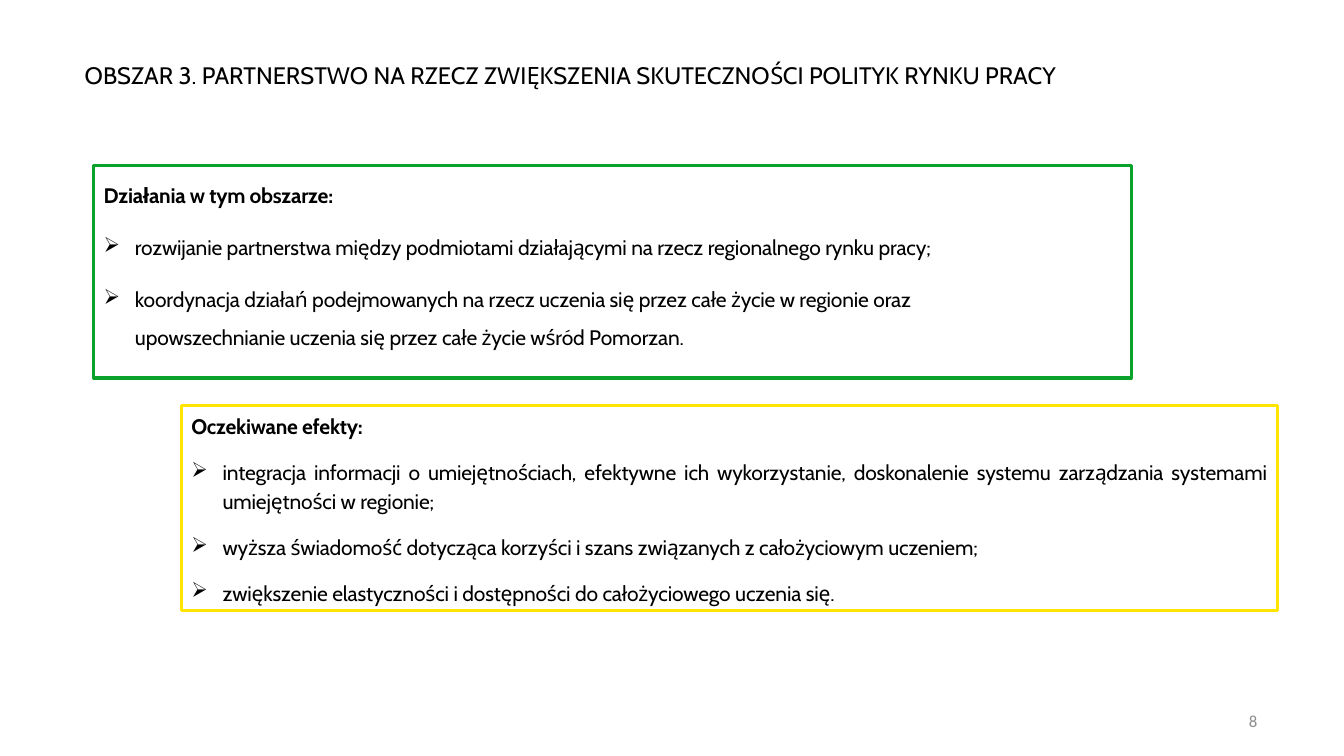
from lxml.etree import SubElement
from pptx import Presentation
from pptx.dml.color import RGBColor
from pptx.enum.shapes import MSO_SHAPE
from pptx.enum.text import MSO_ANCHOR, MSO_AUTO_SIZE, PP_ALIGN
from pptx.oxml.ns import qn
from pptx.util import Inches, Pt

FONT = "Cabin"


def rgb(value):
    return RGBColor.from_string(value)


def format_runs(p, size, color="000000", name=FONT, bold=False, spacing=None):
    for r in p.runs:
        r.font.size = Pt(size)
        r.font.name = name
        r.font.bold = bold
        r.font.color.rgb = rgb(color)
        if spacing is not None:
            r.font._element.set("spc", str(spacing))


def add_bullet(p, tab):
    pPr = p._p.get_or_add_pPr()
    pPr.set("marL", str(Inches(0.31)))
    pPr.set("indent", str(-Inches(0.31)))
    SubElement(pPr, qn("a:buChar")).set("char", "➢")
    if tab:
        tabs = SubElement(pPr, qn("a:tabLst"))
        SubElement(tabs, qn("a:tab"), pos=str(Inches(tab)), algn="l")


def add_title(s, box, text):
    sp = s.shapes.title
    sp.left, sp.top, sp.width, sp.height = map(Inches, box)
    tf = sp.text_frame
    tf.text = text
    tf.word_wrap = True
    tf.auto_size = MSO_AUTO_SIZE.NONE
    tf.vertical_anchor = MSO_ANCHOR.MIDDLE
    p = tf.paragraphs[0]
    p.alignment = PP_ALIGN.LEFT
    p.line_spacing = 1.5
    format_runs(p, 17)


def add_panel(s, box, color, heading, items, align, line_spacing, before, after=0, tab=None):
    sp = s.shapes.add_shape(MSO_SHAPE.RECTANGLE, *map(Inches, box))
    sp.shadow.inherit = False
    sp.fill.solid()
    sp.fill.fore_color.rgb = rgb("FFFFFF")
    sp.line.color.rgb = rgb(color)
    sp.line.width = Pt(2.25)
    tf = sp.text_frame
    tf.word_wrap = True
    tf.vertical_anchor = MSO_ANCHOR.TOP
    for i, text in enumerate([heading, *items]):
        p = tf.add_paragraph() if i else tf.paragraphs[0]
        p.text = text
        if i:
            add_bullet(p, tab)
        p.alignment = align
        p.line_spacing = line_spacing
        p.space_before = Pt(before if i else 0)
        p.space_after = Pt(after)
        format_runs(p, 15, bold=i == 0, spacing=-10 if i else -20)
    return sp


def add_page_number(s, box, number):
    tf = s.shapes.add_textbox(*map(Inches, box)).text_frame
    tf.text = number
    tf.word_wrap = True
    tf.vertical_anchor = MSO_ANCHOR.MIDDLE
    p = tf.paragraphs[0]
    p.alignment = PP_ALIGN.RIGHT
    format_runs(p, 12, "8C8C8C", "Calibri")


def main():
    prs = Presentation()
    prs.slide_width = Inches(13.33)
    prs.slide_height = Inches(7.5)
    s = prs.slides.add_slide(prs.slide_layouts[5])
    add_title(s, (0.74, 0.15, 11.84, 1.04),
              "OBSZAR 3. PARTNERSTWO NA RZECZ ZWIĘKSZENIA SKUTECZNOŚCI POLITYK RYNKU PRACY")
    add_page_number(s, (9.42, 6.95, 3.15, 0.4), "8")
    add_panel(s, (0.93, 1.64, 10.29, 2.11), "0AA22A", "Działania w tym obszarze:", [
        "rozwijanie partnerstwa między podmiotami działającymi na rzecz regionalnego rynku pracy;",
        "koordynacja działań podejmowanych na rzecz uczenia się przez całe życie w regionie oraz \v"
        "upowszechnianie uczenia się przez całe życie wśród Pomorzan.",
    ], PP_ALIGN.LEFT, 1.5, before=10)
    effects = add_panel(s, (1.8, 4.02, 10.87, 2.04), "FFE500", "Oczekiwane efekty:", [
        "integracja informacji o umiejętnościach, efektywne ich wykorzystanie, doskonalenie systemu "
        "zarządzania systemami umiejętności w regionie;",
        "wyższa świadomość dotycząca korzyści i szans związanych z całożyciowym uczeniem;",
        "zwiększenie elastyczności i dostępności do całożyciowego uczenia się.",
    ], PP_ALIGN.JUSTIFY, 1.15, before=6, after=6, tab=0.3)
    effects.text_frame.auto_size = MSO_AUTO_SIZE.SHAPE_TO_FIT_TEXT
    prs.save("out.pptx")


if __name__ == "__main__":
    main()
